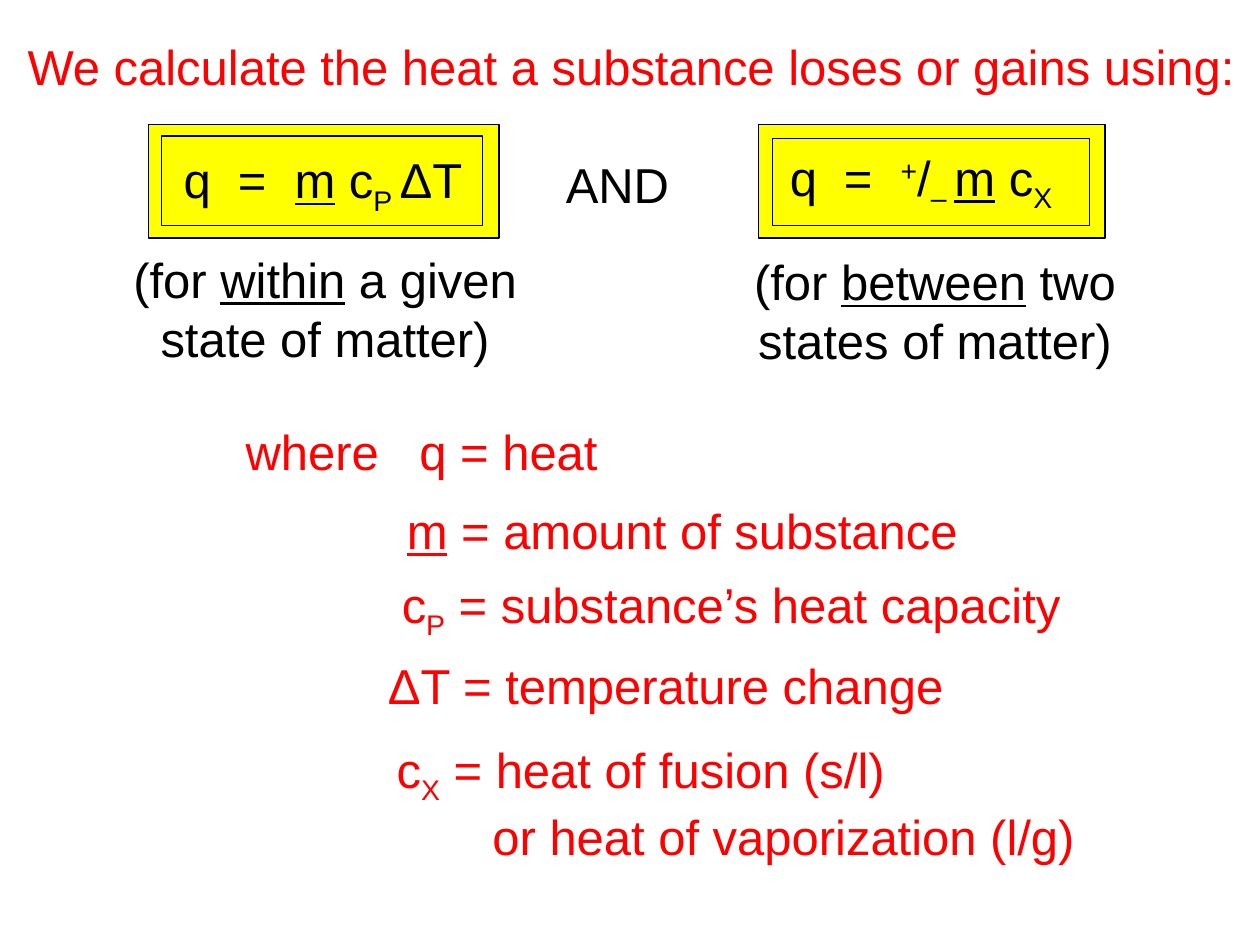
from lxml import etree
from pptx import Presentation
from pptx.dml.color import RGBColor
from pptx.enum.shapes import MSO_SHAPE
from pptx.enum.text import MSO_ANCHOR, MSO_AUTO_SIZE, PP_ALIGN
from pptx.oxml.ns import qn
from pptx.util import Inches, Pt

RED = RGBColor(0xFF, 0x00, 0x00)
BLACK = RGBColor(0x00, 0x00, 0x00)
YELLOW = RGBColor(0xFF, 0xFF, 0x00)
LEFT, CENTER = PP_ALIGN.LEFT, PP_ALIGN.CENTER
TOP, MIDDLE = MSO_ANCHOR.TOP, MSO_ANCHOR.MIDDLE
RECT = MSO_SHAPE.RECTANGLE
FIT_SHAPE = MSO_AUTO_SIZE.SHAPE_TO_FIT_TEXT

FONT, SIZE = "Arial", 28
LINE_H, PADDING = 0.46, 0.11
UNDER, SUB, SUP = "underline", -25, 30

# left, top, width, height; each outer frame comes before its inner one
FRAMES = [
    (1.18, 0.99, 2.78, 0.9),
    (6.02, 0.99, 2.75, 0.9),
    (6.13, 1.1, 2.52, 0.69),
    (1.28, 1.08, 2.55, 0.71),
]

# left, top, width, lines; a line is a list of text or (text, style)
DEFINITIONS = [
    (0.12, 0.24, 10.01,
     [["We calculate the heat a substance loses or gains using:"]]),
    (1.85, 3.29, 3.11, [["where\tq = heat"]]),
    (3.13, 3.92, 4.69, [[("m", UNDER), " = amount of substance"]]),
    (3.09, 4.54, 5.58, [["c", ("P", SUB), " = substance’s heat capacity"]]),
    (2.98, 5.15, 4.72, [["ΔT = temperature change"]]),
]
HEATS_OF_CHANGE = (3.05, 5.82, 5.75, [
    ["c", ("X", SUB), " = heat of fusion (s/l)"],
    ["or heat of vaporization (l/g)"],
])
FORMULAS = [
    (1.36, 1.14, 2.43,
     [["q\t=\t", ("m", UNDER), " c", ("P ", SUB), "ΔT"]]),
    (6.17, 1.12, 2.4,
     [["q\t=\t", ("+", SUP), "/", ("– ", SUB), ("m", UNDER), " c",
       ("X", SUB)]]),
]
CAPTIONS = [
    (0.95, 1.93, 3.26,
     [["(for ", ("within", UNDER), " a given"], ["state of matter)"]]),
    (4.39, 1.18, 1.02, [["AND"]]),
    (5.88, 1.95, 3.08,
     [["(for ", ("between", UNDER), " two"], ["states of matter)"]]),
]
WHERE_TABS = [1.38]
FORMULA_TABS = [0.43, 0.88]
CONTINUATION_INDENT = 0.76


def add_frame(slide, box):
    sp = slide.shapes.add_shape(RECT, *map(Inches, box))
    sp.shadow.inherit = False
    sp.fill.solid()
    sp.fill.fore_color.rgb = YELLOW
    sp.line.color.rgb = BLACK
    sp.line.width = Pt(0.75)


def add_run(p, part):
    text, style = (part, None) if isinstance(part, str) else part
    r = p.add_run()
    r.text = text
    if style == UNDER:
        r.font.underline = True
    elif style:
        r.font._element.set("baseline", str(style * 1000))


def set_tabs(p, stops):
    tab_list = etree.SubElement(p._p.get_or_add_pPr(), qn("a:tabLst"))
    for stop in stops:
        etree.SubElement(tab_list, qn("a:tab"),
                         pos=str(Inches(stop)), algn="l")


def add_text(slide, box, color, align=LEFT, anchor=TOP, tabs=()):
    left, top, width, lines = box
    height = PADDING + LINE_H * len(lines)
    sp = slide.shapes.add_textbox(*map(Inches, (left, top, width, height)))
    tf = sp.text_frame
    tf.word_wrap = False
    tf.auto_size = FIT_SHAPE
    tf.vertical_anchor = anchor
    for i, line in enumerate(lines):
        p = tf.add_paragraph() if i else tf.paragraphs[0]
        p.alignment = align
        if tabs:
            set_tabs(p, tabs)
        p.font.name = FONT
        p.font.size = Pt(SIZE)
        p.font.color.rgb = color
        for part in line:
            add_run(p, part)
    return tf


def main():
    prs = Presentation()
    prs.slide_width, prs.slide_height = Inches(10), Inches(7.5)
    slide = prs.slides.add_slide(prs.slide_layouts[6])
    for box in FRAMES:
        add_frame(slide, box)
    heats = add_text(slide, HEATS_OF_CHANGE, RED)
    continuation = heats.paragraphs[1]._p.get_or_add_pPr()
    continuation.set("marL", str(Inches(CONTINUATION_INDENT)))
    for box in DEFINITIONS:
        has_tab = "\t" in box[3][0][0]
        add_text(slide, box, RED, anchor=MIDDLE,
                 tabs=WHERE_TABS if has_tab else ())
    for box in FORMULAS:
        add_text(slide, box, BLACK, tabs=FORMULA_TABS)
    for box in CAPTIONS:
        add_text(slide, box, BLACK, align=CENTER)
    prs.save("out.pptx")


if __name__ == "__main__":
    main()
